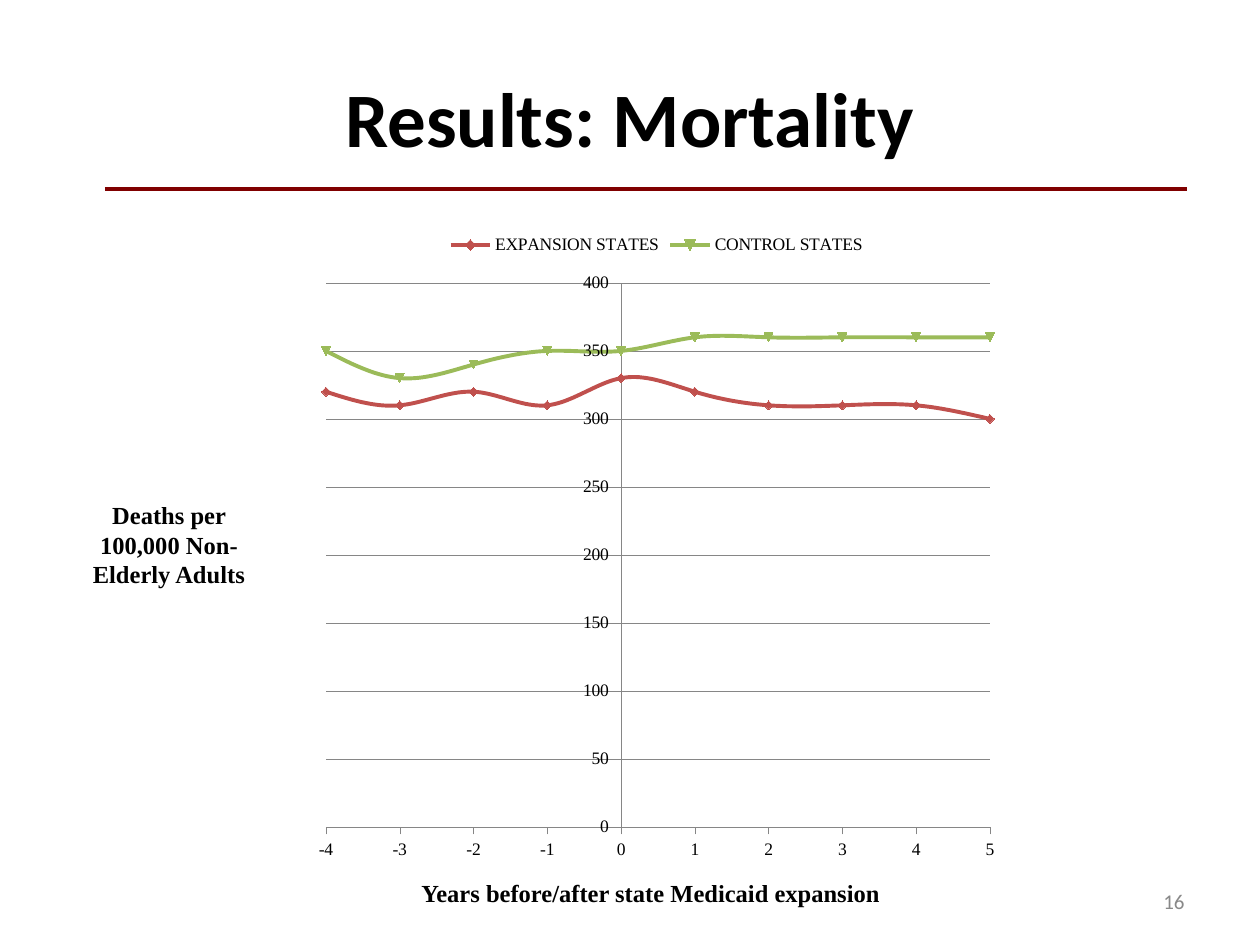
from lxml import etree
from pptx import Presentation
from pptx import util as u
from pptx.chart.data import XyChartData
from pptx.dml.color import RGBColor
from pptx.enum import chart as c, shapes, text
from pptx.oxml.ns import qn

PX = 914400 / 126
SERIF = "Times New Roman"


def px(*lengths):
    return [u.Emu(round(length * PX)) for length in lengths]


def style(font, name, size, color, bold=False):
    font.name, font.size, font.bold = name, u.Pt(size), bold
    font.color.rgb = RGBColor.from_string(color)


deck = Presentation()
deck.slide_width, deck.slide_height = px(1260, 945)
page = deck.slides.add_slide(deck.slide_layouts[5])

# Title and the rule below it
title = page.shapes.title
title.left, title.top, title.width, title.height = px(0, 38, 1260, 157)
title.text_frame.text = "Results: Mortality"
title.text_frame.vertical_anchor = text.MSO_ANCHOR.MIDDLE
para = title.text_frame.paragraphs[0]
para.alignment = text.PP_ALIGN.CENTER
style(para.runs[0].font, "Calibri", 44, "000000", True)

rule = page.shapes.add_connector(shapes.MSO_CONNECTOR.STRAIGHT, *px(105, 189, 1187, 189))
rule.line.color.rgb = RGBColor.from_string("800000")
rule.line.width = u.Pt(2.25)
etree.SubElement(rule._element.spPr, qn("a:effectLst"))

# Slide number and axis captions
LEFT, CENTER, RIGHT = text.PP_ALIGN.LEFT, text.PP_ALIGN.CENTER, text.PP_ALIGN.RIGHT
TOP, MIDDLE = text.MSO_ANCHOR.TOP, text.MSO_ANCHOR.MIDDLE
labels = [
    ("16", (903, 876, 294, 50), RIGHT, MIDDLE, ("Calibri", 12, "898989")),
    ("Years before/after state Medicaid expansion", (409, 872, 528, 43), LEFT, TOP,
     (SERIF, 14, "000000", True)),
    ("Deaths per 100,000 Non-Elderly Adults", (74, 494, 190, 102), CENTER, TOP,
     (SERIF, 14, "000000", True)),
]
for words, place, align, anchor, look in labels:
    box = page.shapes.add_textbox(*px(*place))
    box.text_frame.word_wrap = True
    box.text_frame.vertical_anchor = anchor
    box.text_frame.text = words
    para = box.text_frame.paragraphs[0]
    para.alignment = align
    style(para.runs[0].font, *look)

# Mortality chart
years = range(-4, 6)
groups = [
    ("EXPANSION STATES", "C0504D", [320, 310, 320, 310, 330, 320, 310, 310, 310, 300]),
    ("CONTROL STATES", "9BBB59", [350, 330, 340, 350, 350, 360, 360, 360, 360, 360]),
]
data = XyChartData()
for name, color, deaths in groups:
    series = data.add_series(name)
    for year, value in zip(years, deaths):
        series.add_data_point(year, value)
chart = page.shapes.add_chart(
    c.XL_CHART_TYPE.XY_SCATTER_SMOOTH, *px(305, 221, 703, 651), data).chart
style(chart.font, SERIF, 10, "000000")
chart.has_title = False
chart.has_legend = True
chart.legend.position = c.XL_LEGEND_POSITION.TOP
chart.legend.include_in_layout = False

# Smoothed series; numbering from 1 picks the automatic diamond and triangle markers
plot = chart.plots[0]
plot.vary_by_categories = False
for number, (series, (name, color, deaths)) in enumerate(zip(plot.series, groups), 1):
    rgb = RGBColor.from_string(color)
    series.format.line.color.rgb = rgb
    series.format.line.width = u.Pt(2.25)
    series.marker.size = 5
    series.marker.format.fill.solid()
    series.marker.format.fill.fore_color.rgb = rgb
    series.marker.format.line.color.rgb = rgb
    element = series._element
    element.find(qn("c:idx")).set("val", str(number))
    for old in element.findall(qn("c:smooth")):
        element.remove(old)
    etree.SubElement(element, qn("c:smooth")).set("val", "1")

# Axes
years_axis, deaths_axis = chart.category_axis, chart.value_axis
years_axis.has_major_gridlines = False
deaths_axis.has_major_gridlines = True
for axis, low, high, step in ((years_axis, -4, 5, 1), (deaths_axis, 0, 400, 50)):
    axis.minimum_scale, axis.maximum_scale, axis.major_unit = low, high, step
    axis.major_tick_mark = c.XL_TICK_MARK.OUTSIDE
    axis.minor_tick_mark = c.XL_TICK_MARK.NONE
    axis.tick_labels.number_format = "General"
    axis.tick_labels.number_format_is_linked = False
for part in (years_axis, deaths_axis, deaths_axis.major_gridlines):
    part.format.line.color.rgb = RGBColor.from_string("868686")
    part.format.line.width = u.Pt(0.25)

# Fixed inner plot area, as fractions of the chart frame
area = chart._chartSpace.chart.plotArea
for old in area.findall(qn("c:layout")):
    area.remove(old)
layout = etree.Element(qn("c:layout"))
manual = etree.SubElement(layout, qn("c:manualLayout"))
for tag, value in (("layoutTarget", "inner"), ("xMode", "edge"), ("yMode", "edge"),
                   ("x", 21 / 703), ("y", 62 / 651), ("w", 664 / 703), ("h", 544 / 651)):
    etree.SubElement(manual, qn("c:" + tag)).set("val", str(value))
area.insert(0, layout)

deck.save("out.pptx")
